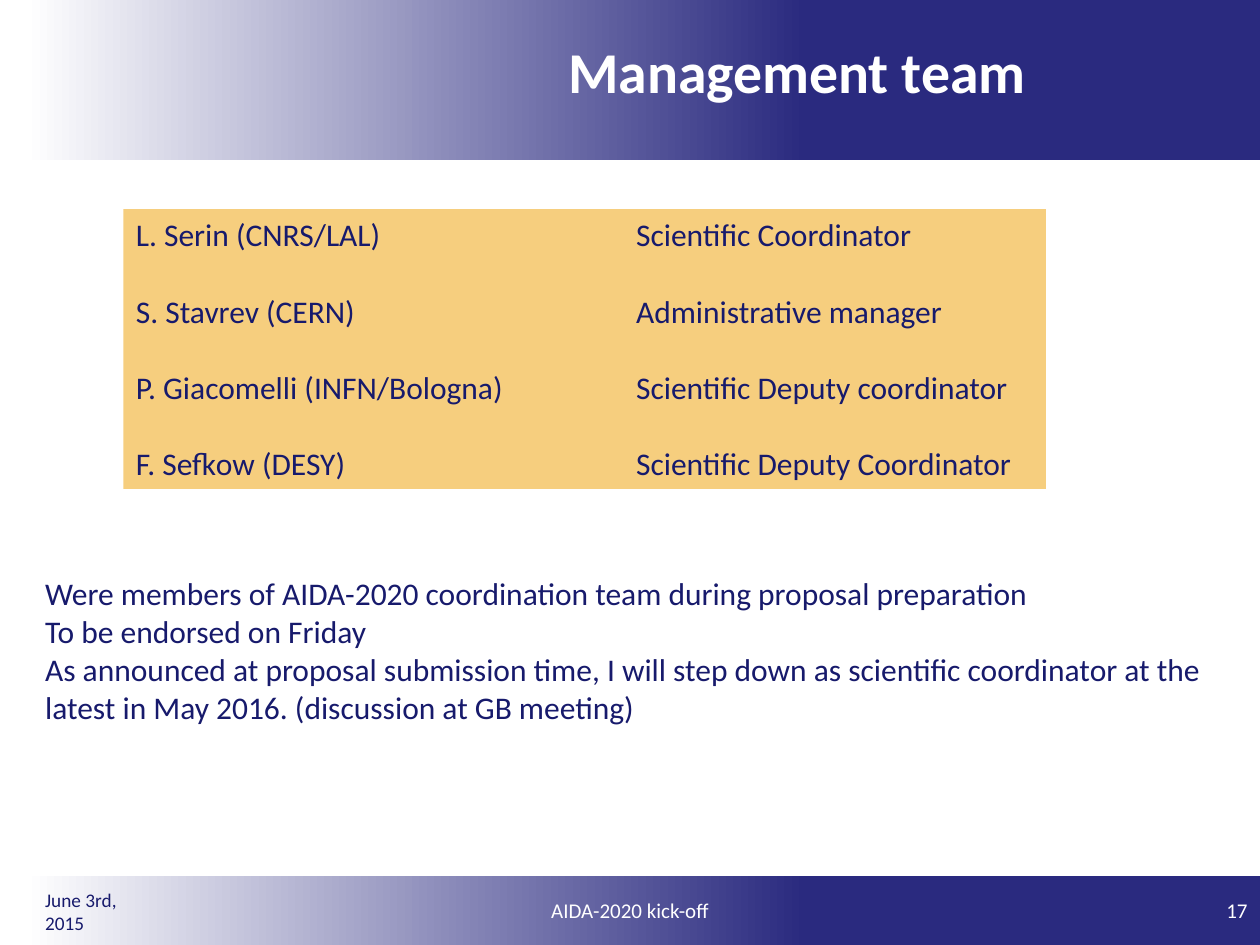
"""Build the management team slide."""
from pptx import Presentation
from pptx.dml.color import RGBColor
from pptx.enum.shapes import MSO_SHAPE
from pptx.enum.text import MSO_ANCHOR, PP_ALIGN
from pptx.oxml.ns import qn
from pptx.util import Inches, Pt
from lxml.etree import SubElement

WHITE = RGBColor(0xFF, 0xFF, 0xFF)
BLUE = RGBColor(0x2A, 0x2A, 0x7F)
NAVY = RGBColor(0x17, 0x1A, 0x6C)
AMBER = RGBColor(0xF6, 0xCE, 0x7E)

TITLE = "Management team"
TEAM = [
    ("L. Serin (CNRS/LAL)", "Scientific Coordinator"),
    ("S. Stavrev (CERN)", "Administrative manager"),
    ("P. Giacomelli (INFN/Bologna)", "Scientific Deputy coordinator"),
    ("F. Sefkow (DESY)", "Scientific Deputy Coordinator"),
]
NOTES = [
    "Were members of AIDA-2020 coordination team during proposal preparation",
    "To be endorsed on Friday",
    "As announced at proposal submission time, I will step down as scientific coordinator at the",
    "latest in May 2016. (discussion at GB meeting)",
]
DATE = "June 3rd, 2015"
EVENT = "AIDA-2020 kick-off"
NUMBER = "17"
ROLE_TAB = 3.97
FOOTER_TOP, FOOTER_HEIGHT = 6.95, 0.55


def write(shape, lines, size=18, color=NAVY, bold=False, align=PP_ALIGN.LEFT,
          anchor=MSO_ANCHOR.TOP, wrap=True, gap=0, spacing=1.0, tab=None):
    """Fill a shape with formatted paragraphs."""
    frame = shape.text_frame
    frame.word_wrap = wrap
    frame.vertical_anchor = anchor
    for index, line in enumerate(lines):
        para = frame.paragraphs[0] if index == 0 else frame.add_paragraph()
        para.alignment = align
        para.line_spacing = spacing
        para.space_before = Pt(gap if index else 0)
        if tab:
            stops = SubElement(para._p.get_or_add_pPr(), qn("a:tabLst"))
            SubElement(stops, qn("a:tab"), pos=str(Inches(tab)), algn="l")
        span = para.add_run()
        span.text = line
        span.font.name = "Calibri"
        span.font.size = Pt(size)
        span.font.bold = bold
        span.font.color.rgb = color


def add_box(page, *place):
    return page.shapes.add_textbox(*map(Inches, place))


def add_panel(page, *place):
    panel = page.shapes.add_shape(MSO_SHAPE.RECTANGLE, *map(Inches, place))
    panel.shadow.inherit = False
    panel.line.fill.background()
    return panel


def add_band(page, top, height):
    band = add_panel(page, 0, top, 10, height)
    band.fill.gradient()
    band.fill.gradient_angle = 0
    for stop, position, color in zip(band.fill.gradient_stops, (0.02, 0.64), (WHITE, BLUE)):
        stop.position = position
        stop.color.rgb = color
    return band


def main():
    deck = Presentation()
    deck.slide_width, deck.slide_height = Inches(10), Inches(7.5)
    page = deck.slides.add_slide(deck.slide_layouts[5])

    add_band(page, 0, 1.27)
    footer = add_band(page, FOOTER_TOP, FOOTER_HEIGHT)
    write(footer, [EVENT], size=12, color=WHITE, align=PP_ALIGN.CENTER,
          anchor=MSO_ANCHOR.MIDDLE)

    number = add_box(page, 9.22, FOOTER_TOP, 0.78, FOOTER_HEIGHT)
    write(number, [NUMBER], size=12, color=WHITE, align=PP_ALIGN.RIGHT,
          anchor=MSO_ANCHOR.MIDDLE)

    title = page.shapes.title
    title.left, title.top, title.width, title.height = map(Inches, (4.41, 0, 5.47, 1.18))
    write(title, [TITLE], size=33, color=WHITE, bold=True,
          anchor=MSO_ANCHOR.MIDDLE, spacing=0.9)
    title.element.getparent().append(title.element)

    date = add_box(page, 0.26, 7.03, 1.06, 0.4)
    write(date, [DATE], size=11, anchor=MSO_ANCHOR.MIDDLE)

    team = add_panel(page, 0.98, 1.66, 7.32, 2.22)
    team.fill.solid()
    team.fill.fore_color.rgb = AMBER
    write(team, ["\t".join(member) for member in TEAM], gap=22, tab=ROLE_TAB)

    notes = add_box(page, 0.26, 4.51, 9.54, 1.31)
    write(notes, NOTES, wrap=False)

    deck.save("out.pptx")


if __name__ == "__main__":
    main()
